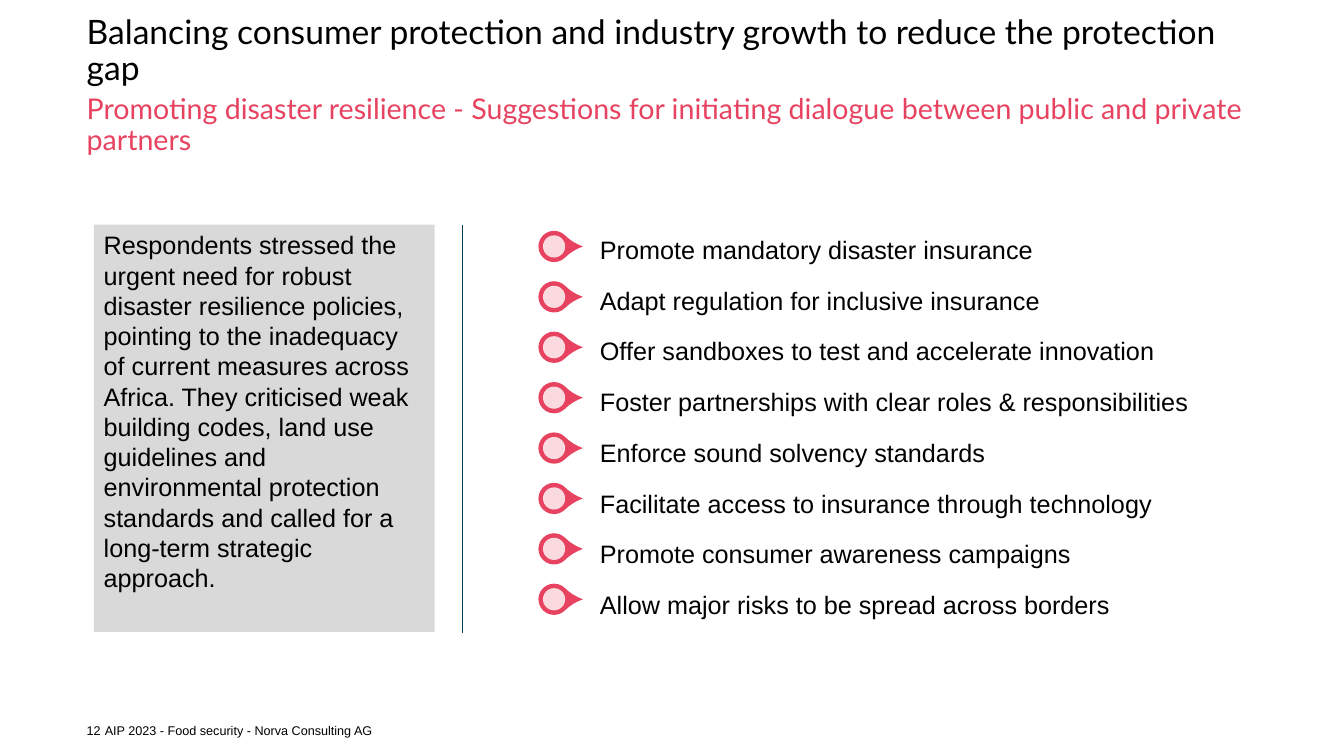
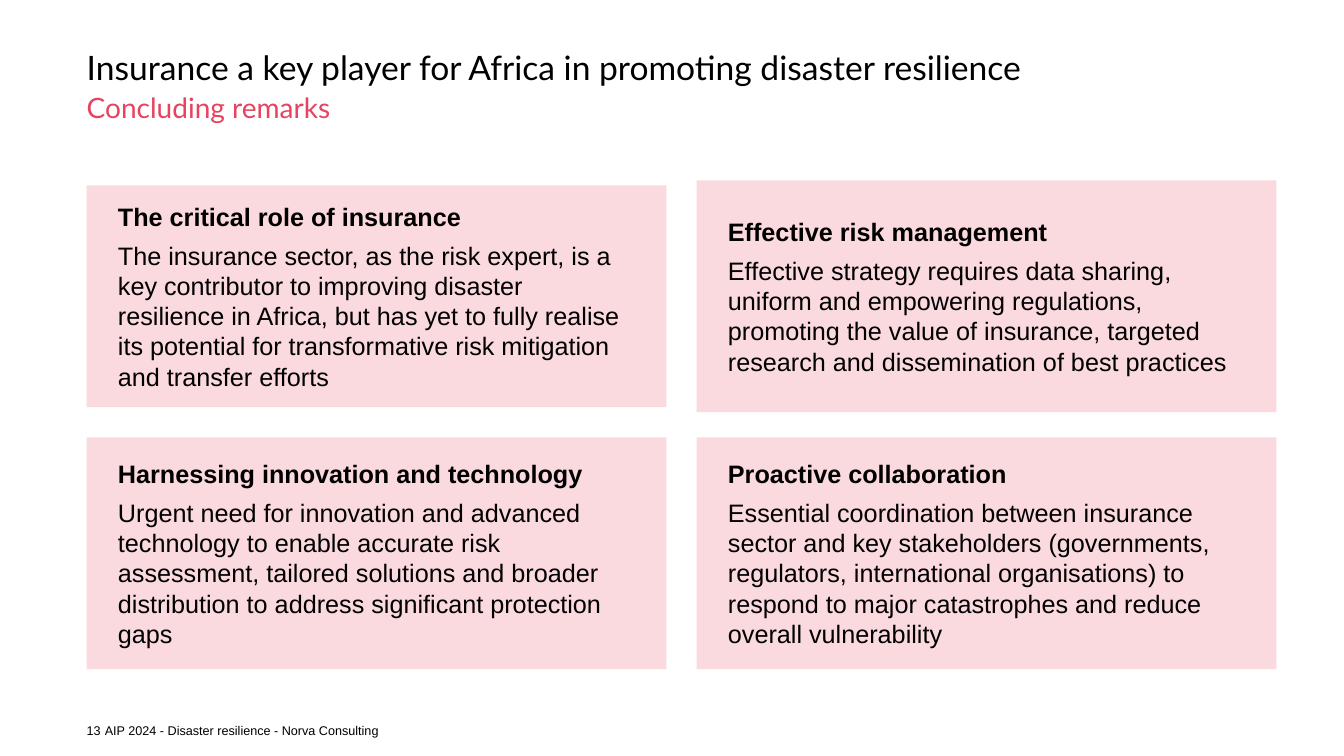
from lxml import etree
from pptx import Presentation
from pptx.dml.color import RGBColor
from pptx.enum.shapes import MSO_CONNECTOR as Connector
from pptx.enum.shapes import MSO_SHAPE as Shape
from pptx.enum.text import MSO_ANCHOR as Anchor
from pptx.enum.text import PP_ALIGN as Align
from pptx.oxml.ns import qn
from pptx.util import Inches, Pt

# Shared style
BLACK = RGBColor(0x00, 0x00, 0x00)
RED = RGBColor(0xE7, 0x43, 0x60)
PINK = RGBColor(0xFA, 0xD9, 0xDF)
GREY = RGBColor(0xD9, 0xD9, 0xD9)
NAVY = RGBColor(0x00, 0x3B, 0x5C)
TITLE_FONT = "Lato"
BODY_FONT = "Arial"
LEFT = 0.86
TITLE_WIDTH = 11.71

# Content
STATEMENT = (
    "Respondents stressed the urgent need for robust disaster resilience "
    "policies, pointing to the inadequacy of current measures across Africa. "
    "They criticised weak building codes, land use guidelines and environmental "
    "protection standards and called for a long-term strategic approach."
)
SUGGESTIONS = [
    "Promote mandatory disaster insurance",
    "Adapt regulation for inclusive insurance",
    "Offer sandboxes to test and accelerate innovation",
    "Foster partnerships with clear roles & responsibilities",
    "Enforce sound solvency standards",
    "Facilitate access to insurance through technology",
    "Promote consumer awareness campaigns",
    "Allow major risks to be spread across borders",
]
# Heading, text and card height, row by row
REMARKS = [
    ("The critical role of insurance",
     "The insurance sector, as the risk expert, is a key contributor to "
     "improving disaster resilience in Africa, but has yet to fully realise its "
     "potential for transformative risk mitigation and transfer efforts", 2.2),
    ("Effective risk management",
     "Effective strategy requires data sharing, uniform and empowering "
     "regulations, promoting the value of insurance, targeted research and "
     "dissemination of best practices", 2.3),
    ("Harnessing innovation and technology",
     "Urgent need for innovation and advanced technology to enable accurate risk "
     "assessment, tailored solutions and broader distribution to address "
     "significant protection gaps", 2.3),
    ("Proactive collaboration",
     "Essential coordination between insurance sector and key stakeholders "
     "(governments, regulators, international organisations) to respond to major "
     "catastrophes and reduce overall vulnerability", 2.3),
]


def write_text(shape, paragraphs, size=18, font=BODY_FONT, color=BLACK,
               anchor=Anchor.TOP, insets=(0, 0), line_spacing=None, gap=0,
               bold_first=False):
    """Fill a shape with paragraphs; gap is the space before and after each."""
    frame = shape.text_frame
    frame.word_wrap = True
    frame.vertical_anchor = anchor
    frame.margin_left = frame.margin_right = Inches(insets[0])
    frame.margin_top = frame.margin_bottom = Inches(insets[1])
    for index, text in enumerate(paragraphs):
        paragraph = frame.add_paragraph() if index else frame.paragraphs[0]
        paragraph.alignment = Align.LEFT
        if line_spacing:
            paragraph.line_spacing = line_spacing
        if gap:
            paragraph.space_after = Pt(gap)
            if index:
                paragraph.space_before = Pt(gap)
        run = paragraph.add_run()
        run.text = text
        run.font.name = font
        run.font.size = Pt(size)
        run.font.color.rgb = color
        run.font.bold = bold_first and index == 0


def add_text(slide, left, top, width, height, paragraphs, **style):
    box = slide.shapes.add_textbox(
        Inches(left), Inches(top), Inches(width), Inches(height))
    write_text(box, paragraphs, **style)


def add_filled(shapes, kind, left, top, width, height, fill):
    shape = shapes.add_shape(
        kind, Inches(left), Inches(top), Inches(width), Inches(height))
    shape.shadow.inherit = False
    shape.fill.solid()
    shape.fill.fore_color.rgb = fill
    shape.line.fill.background()
    return shape


def add_divider(slide, left, top, bottom):
    line = slide.shapes.add_connector(
        Connector.STRAIGHT, Inches(left), Inches(top), Inches(left), Inches(bottom))
    line.line.color.rgb = NAVY
    line.line.width = Pt(0.5)
    etree.SubElement(line._element.spPr, qn("a:effectLst"))


def add_marker(slide, left, top, size=0.31, core=0.22):
    """Drop pointing right with a light disc at its centre."""
    group = slide.shapes.add_group_shape()
    drop = add_filled(group.shapes, Shape.TEAR, left, top, size, size, RED)
    drop.adjustments[0] = 1.306
    drop.rotation = 45
    inset = (size - core) / 2
    add_filled(group.shapes, Shape.OVAL, left + inset, top + inset, core, core, PINK)


def add_page(presentation, number, title, subtitle, footer, subtitle_size=20):
    """Blank slide with title, subtitle, page number and footer."""
    slide = presentation.slides.add_slide(presentation.slide_layouts[6])
    heading = {"font": TITLE_FONT, "line_spacing": 0.9}
    add_text(slide, LEFT, 0.44, TITLE_WIDTH, 0.43, [title],
             size=24, anchor=Anchor.BOTTOM, **heading)
    add_text(slide, LEFT, 0.94, TITLE_WIDTH, 0.43, [subtitle],
             size=subtitle_size, color=RED, **heading)
    add_text(slide, LEFT, 7.17, 0.17, 0.15, [str(number)], size=9)
    add_text(slide, 1.04, 7.17, 4, 0.15, [footer], size=9)
    return slide


def build_suggestions(presentation):
    slide = add_page(
        presentation, 12,
        "Balancing consumer protection and industry growth to reduce the "
        "protection gap",
        "Promoting disaster resilience - Suggestions for initiating dialogue "
        "between public and private partners",
        "AIP 2023 - Food security - Norva Consulting AG", subtitle_size=20.4)

    # Statement and divider
    panel = add_filled(slide.shapes, Shape.RECTANGLE, 0.93, 2.23, 3.38, 4.04, GREY)
    write_text(panel, [STATEMENT], insets=(0.1, 0.05))
    add_divider(slide, 4.59, 2.23, 6.28)

    # Suggestions with markers
    add_text(slide, 5.95, 2.18, 6.51, 3.99, SUGGESTIONS,
             anchor=Anchor.MIDDLE, line_spacing=1.4, gap=3)
    for row in range(len(SUGGESTIONS)):
        add_marker(slide, 5.34, 2.29 + row * 0.5)


def build_remarks(presentation):
    slide = add_page(
        presentation, 13,
        "Insurance a key player for Africa in promoting disaster resilience",
        "Concluding remarks",
        "AIP 2024 - Disaster resilience - Norva Consulting")

    # Two by two cards, each centred in its cell
    width, cell_height, top = 5.75, 2.3, 1.79
    for index, (heading, text, height) in enumerate(REMARKS):
        row, column = divmod(index, 2)
        card = add_filled(
            slide.shapes, Shape.RECTANGLE, LEFT + column * (width + 0.3),
            top + row * (cell_height + 0.25) + (cell_height - height) / 2,
            width, height, PINK)
        write_text(card, [heading, text], anchor=Anchor.MIDDLE,
                   insets=(0.31, 0.2), gap=3, bold_first=True)


def main():
    presentation = Presentation()
    presentation.slide_width = Inches(13.33)
    presentation.slide_height = Inches(7.5)
    build_suggestions(presentation)
    build_remarks(presentation)
    presentation.save("out.pptx")


if __name__ == "__main__":
    main()
